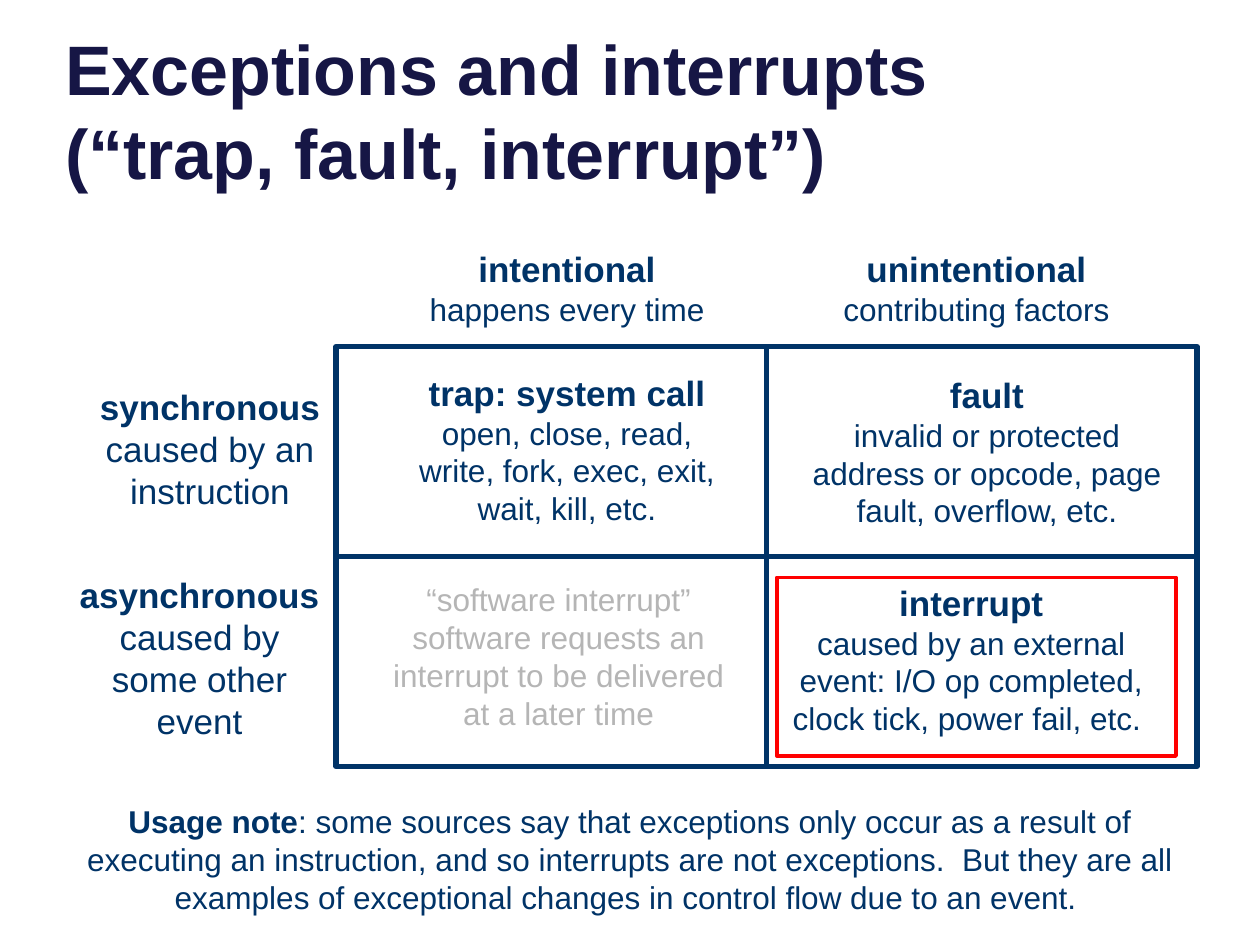
from pptx import Presentation
from pptx.dml.color import RGBColor
from pptx.enum.shapes import MSO_SHAPE as Shape
from pptx.enum.text import MSO_ANCHOR as Anchor, MSO_AUTO_SIZE as Fit, PP_ALIGN as Align
from pptx.util import Inches, Pt

UNIT = Inches(1) / 12
NAVY, INK, GRAY, RED = "003367", "161645", "B5B5B5", "FF0000"


def color(code):
    """Turn a hex string into a colour."""
    return RGBColor.from_string(code)


def place(item, box):
    """Move an item to a box given in grid columns and rows."""
    item.left, item.top, item.width, item.height = (round(n * UNIT) for n in box)


def style(font, size, code, bold=False):
    """Set size, colour and weight of a font."""
    font.name, font.size, font.bold = "Arial", Pt(size), bold
    font.color.rgb = color(code)


def frame(slide, box, code, width):
    """Draw an unfilled rectangle."""
    rect = slide.shapes.add_shape(Shape.RECTANGLE, 0, 0, 0, 0)
    place(rect, box)
    rect.shadow.inherit = False
    rect.fill.background()
    rect.line.color.rgb = color(code)
    rect.line.width = Pt(width)


def label(slide, box, lines):
    """Write centred paragraphs of (text, size, colour, bold) in a box."""
    item = slide.shapes.add_textbox(0, 0, 0, 0)
    place(item, box)
    body = item.text_frame
    body.word_wrap, body.auto_size = True, Fit.SHAPE_TO_FIT_TEXT
    for i, (text, *look) in enumerate(lines):
        para = body.add_paragraph() if i else body.paragraphs[0]
        para.text, para.alignment = text, Align.CENTER
        style(para.font, *look)
    return body


def entry(slide, box, head, text, size=18):
    """Write a bold head above its plain text."""
    label(slide, box, [(head, 20, NAVY, True), (text, size, NAVY)])


def title(slide, box, text):
    """Fill the title placeholder."""
    item = slide.shapes.title
    place(item, box)
    body = item.text_frame
    body.text, body.word_wrap = text, True
    body.auto_size, body.vertical_anchor = Fit.NONE, Anchor.BOTTOM
    para = body.paragraphs[0]
    para.alignment = Align.LEFT
    style(para.font, 40, INK, True)


def matrix(slide, box):
    """Draw the two by two matrix with its heads and cells."""
    x, y, w, h = box
    w, h = w / 2, h / 2
    for row in range(2):
        for col in range(2):
            frame(slide, (x + col * w, y + row * h, w, h), NAVY, 3)
    entry(slide, (x - 26, y + 3.1, 28, 13.3), "synchronous",
          "caused by an instruction", 20)
    entry(slide, (x - 26, y + 21, 26, 17.4), "asynchronous",
          "caused by some other event", 20)
    entry(slide, (x + 6, y - 10, 32, 8.9), "intentional", "happens every time")
    entry(slide, (x + w + 4, y - 10, 32, 8.9), "unintentional",
          "contributing factors")
    entry(slide, (x + 6, y + 1.8, 32, 16.2), "trap: system call",
          "open, close, read, write, fork, exec, exit, wait, kill, etc.")
    entry(slide, (x + w + 3, y + 2, 36, 16.2), "fault",
          "invalid or protected address or opcode, page fault, overflow, etc.")
    entry(slide, (x + w, y + 21.8, 39, 16.2), "interrupt",
          "caused by an external event: I/O op completed, "
          "clock tick, power fail, etc. ")
    label(slide, (x + 3.5, y + 21.7, 35.4, 20.6), [
        ("“software interrupt” software requests an interrupt "
         "to be delivered at a later time", 18, GRAY)])
    frame(slide, (x + w + 1, y + 22, 38, 17), RED, 2.25)


def note(slide, box, head, text):
    """Write the note with a bold lead-in."""
    para = label(slide, box, [(head, 18, NAVY)]).paragraphs[0]
    para.runs[0].font.bold = True
    para.add_run().text = text


def main():
    """Build and save the slide."""
    deck = Presentation()
    deck.slide_width, deck.slide_height = Inches(10), Inches(7.5)
    slide = deck.slides.add_slide(deck.slide_layouts[5])
    title(slide, (5, -1.4, 108, 20.4),
          "Exceptions and interrupts\v(“trap, fault, interrupt”)")
    matrix(slide, (32, 33, 82, 40))
    note(slide, (5, 75.8, 110, 12.1), "Usage note",
         ": some sources say that exceptions only occur as a result of executing "
         "an instruction, and so interrupts are not exceptions.  But they are all "
         "examples of exceptional changes in control flow due to an event. ")
    deck.save("out.pptx")


if __name__ == "__main__":
    main()
